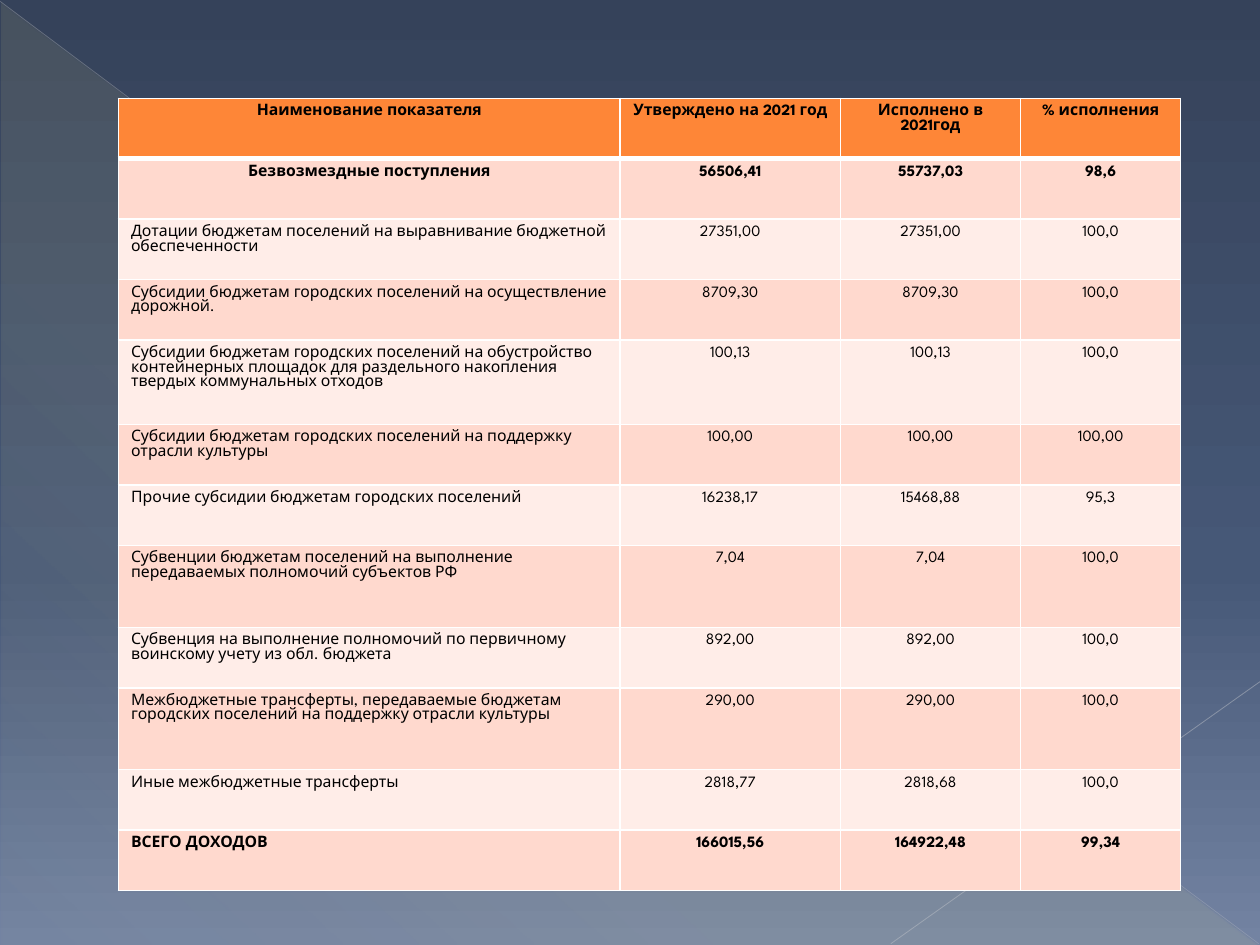
from pptx import Presentation
from pptx.dml.color import RGBColor
from pptx.enum import shapes, text
from pptx.oxml import parse_xml
from pptx.oxml.ns import nsdecls, qn
from pptx.util import Inches, Pt

FONT = "League Spartan"
BLACK, WHITE = "000000", "FFFFFF"
HEADER_FILL = "FE8637"
BAND_FILLS = ("FFEDE8", "FFD9CE")
COLUMN_WIDTHS = (3.98, 1.75, 1.43, 1.27)
ROW_HEIGHT = 0.48
TALL_ROWS = {4: 0.67, 7: 0.65, 9: 0.65}

BUDGET = [
    ("Наименование показателя", "Утверждено на 2021 год", "Исполнено в 2021год", "% исполнения"),
    ("Безвозмездные поступления", "56506,41", "55737,03", "98,6"),
    ("Дотации бюджетам поселений на выравнивание бюджетной обеспеченности",
     "27351,00", "27351,00", "100,0"),
    ("Субсидии бюджетам городских поселений на осуществление дорожной.",
     "8709,30", "8709,30", "100,0"),
    ("Субсидии бюджетам городских поселений на обустройство контейнерных площадок "
     "для раздельного накопления твердых коммунальных отходов",
     "100,13", "100,13", "100,0"),
    ("Субсидии бюджетам городских поселений на поддержку отрасли культуры",
     "100,00", "100,00", "100,00"),
    ("Прочие субсидии бюджетам городских поселений", "16238,17", "15468,88", "95,3"),
    ("Субвенции бюджетам поселений на выполнение передаваемых полномочий субъектов РФ",
     "7,04", "7,04", "100,0"),
    ("Субвенция на выполнение полномочий по первичному воинскому учету из обл. бюджета",
     "892,00", "892,00", "100,0"),
    ("Межбюджетные трансферты, передаваемые бюджетам городских поселений "
     "на поддержку отрасли культуры", "290,00", "290,00", "100,0"),
    ("Иные межбюджетные трансферты", "2818,77", "2818,68", "100,0"),
    ("ВСЕГО ДОХОДОВ", "166015,56", "164922,48", "99,34"),
]
BOLD_ROWS = (0, 1, len(BUDGET) - 1)


def rgb(color):
    return RGBColor.from_string(color)


def color_xml(color, opacity=100):
    return f'<a:srgbClr val="{color}"><a:alpha val="{opacity * 1000}"/></a:srgbClr>'


def apply_gradient(fill, properties, stops, angle):
    """Fill with (position, colour, opacity) stops; the angle runs clockwise."""
    fill.solid()
    stops_xml = "".join(
        f'<a:gs pos="{position * 1000}">{color_xml(color, opacity)}</a:gs>'
        for position, color, opacity in stops)
    gradient = parse_xml(
        f'<a:gradFill {nsdecls("a")} rotWithShape="1"><a:gsLst>{stops_xml}</a:gsLst>'
        f'<a:lin ang="{angle * 60000}" scaled="0"/></a:gradFill>')
    properties.replace(properties.find(qn("a:solidFill")), gradient)


def add_background(slide):
    fill = slide.background.fill
    fill.solid()
    properties = slide.element.find(".//" + qn("p:bgPr"))
    apply_gradient(fill, properties,
                   [(0, "35425A", 100), (60, "465877", 100), (100, "7383A2", 100)], 90)


def add_corner_triangle(slide):
    triangle = slide.shapes.add_shape(
        shapes.MSO_SHAPE.RIGHT_TRIANGLE,
        Inches(0.01), Inches(0.02), Inches(9.98), Inches(7.48))
    triangle.shadow.inherit = False
    triangle.line.fill.background()
    apply_gradient(triangle.fill, triangle.element.spPr,
                   [(0, "FFF39D", 10), (70, "FFF39D", 8), (100, "FFF39D", 1)], 133)


def add_ray(slide, start, end, color, width, opacity):
    ray = slide.shapes.add_connector(
        shapes.MSO_CONNECTOR.STRAIGHT, *map(Inches, start + end))
    ray.line.width = Pt(width)
    ray.line.color.rgb = rgb(color)
    properties = ray.element.spPr
    solid = properties.find(".//" + qn("a:solidFill"))
    solid.replace(solid[0], parse_xml(
        color_xml(color, opacity).replace("<a:srgbClr", f'<a:srgbClr {nsdecls("a")}')))
    properties.append(parse_xml(f'<a:effectLst {nsdecls("a")}/>'))


def set_borders(cell, top=1, bottom=1):
    properties = cell._tc.get_or_add_tcPr()
    for position, (side, width) in enumerate(
            (("L", 1), ("R", 1), ("T", top), ("B", bottom))):
        properties.insert(position, parse_xml(
            f'<a:ln{side} {nsdecls("a")} w="{Pt(width)}"><a:solidFill>'
            f'{color_xml(WHITE)}</a:solidFill></a:ln{side}>'))


def fill_cell(cell, content, fill, bold, centered):
    cell.text = content
    cell.fill.solid()
    cell.fill.fore_color.rgb = rgb(fill)
    paragraph = cell.text_frame.paragraphs[0]
    paragraph.alignment = text.PP_ALIGN.CENTER if centered else text.PP_ALIGN.LEFT
    font = paragraph.runs[0].font
    font.name, font.size, font.bold = FONT, Pt(9), bold
    font.color.rgb = rgb(BLACK)


def add_budget_table(slide):
    heights = [TALL_ROWS.get(row, ROW_HEIGHT) for row in range(len(BUDGET))]
    table = slide.shapes.add_table(
        len(BUDGET), len(COLUMN_WIDTHS), Inches(0.94), Inches(0.78),
        Inches(sum(COLUMN_WIDTHS)), Inches(sum(heights))).table
    for column, width in zip(table.columns, COLUMN_WIDTHS):
        column.width = Inches(width)
    for row, (entries, height) in enumerate(zip(BUDGET, heights)):
        table.rows[row].height = Inches(height)
        fill = BAND_FILLS[row % 2] if row else HEADER_FILL
        for column, entry in enumerate(entries):
            cell = table.cell(row, column)
            fill_cell(cell, entry, fill, row in BOLD_ROWS, column > 0 or row < 2)
            set_borders(cell, top=3 if row == 1 else 1, bottom=3 if row == 0 else 1)


def main():
    presentation = Presentation()
    presentation.slide_width, presentation.slide_height = Inches(10), Inches(7.5)
    slide = presentation.slides.add_slide(presentation.slide_layouts[6])
    add_background(slide)
    add_corner_triangle(slide)
    add_ray(slide, (0, 0.01), (9.99, 7.49), "BABDC4", 0.39, 35)
    add_ray(slide, (10, 5.41), (7.07, 7.49), "C1C4CA", 0.47, 45)
    add_budget_table(slide)
    presentation.save("out.pptx")


if __name__ == "__main__":
    main()
